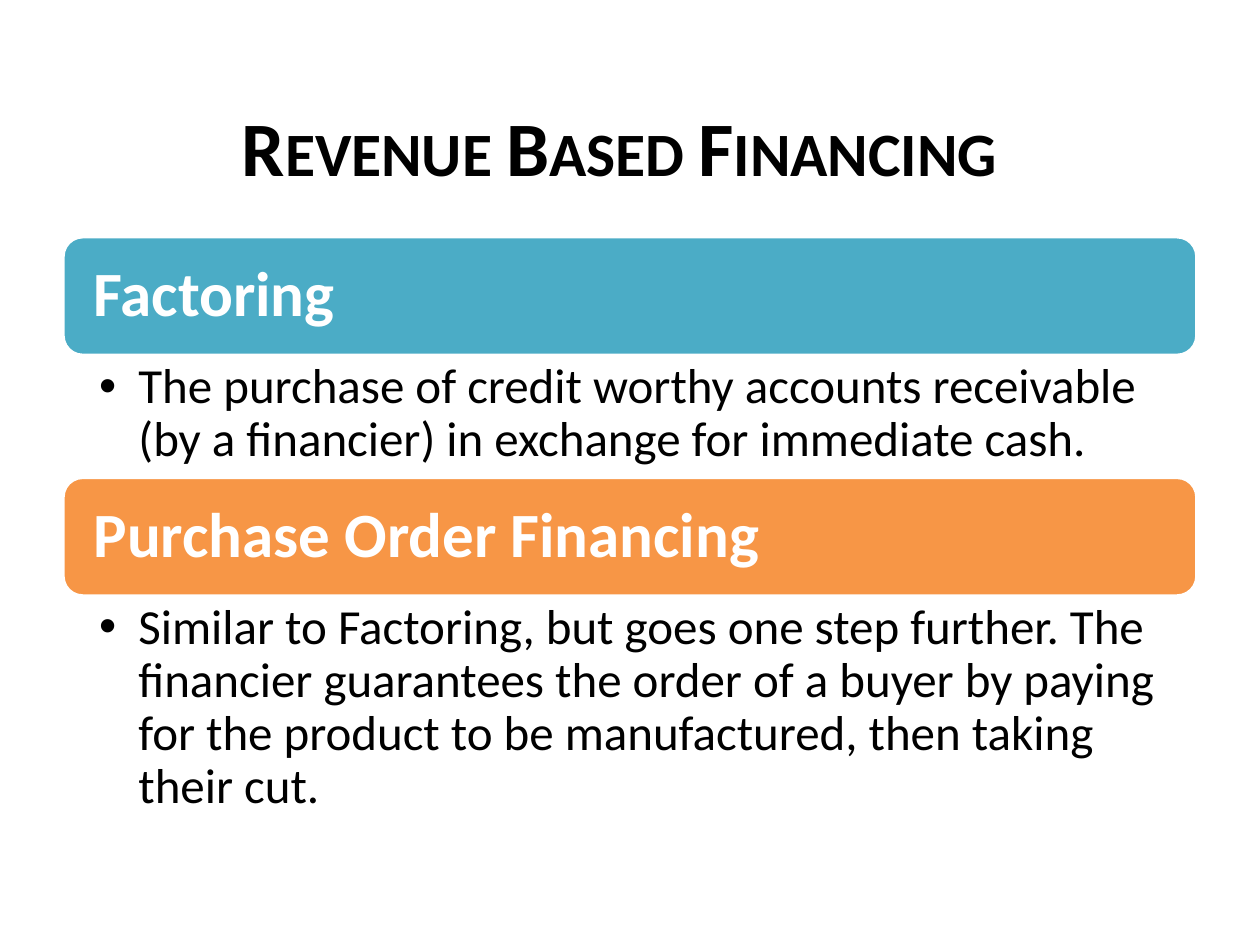
from lxml import etree
from pptx import Presentation
from pptx.dml.color import RGBColor
from pptx.enum.shapes import MSO_SHAPE
from pptx.enum.text import MSO_ANCHOR, PP_ALIGN
from pptx.oxml.ns import qn
from pptx.util import Pt

ROUND = MSO_SHAPE.ROUNDED_RECTANGLE
MID, TOP = MSO_ANCHOR.MIDDLE, MSO_ANCHOR.TOP
LEFT, CENTER = PP_ALIGN.LEFT, PP_ALIGN.CENTER
INK = {"black": "000000", "white": "FFFFFF", "teal": "4BACC6", "orange": "F79646"}
BAR = 67.8
PARTS = [
    ("Factoring", "teal", 69.7,
     "The purchase of credit worthy accounts receivable (by a financier) "
     "in exchange for immediate cash."),
    ("Purchase Order Financing", "orange", 131.8,
     "Similar to Factoring, but goes one step further. The financier guarantees "
     "the order of a buyer by paying for the product to be manufactured, "
     "then taking their cut."),
]


def color(name):
    return RGBColor.from_string(INK[name])


def write(shape, text, size=28, ink="black", bold=False, caps=False, align=LEFT,
          anchor=TOP, pad=(7.2, 3.6, 7.2, 3.6), space=1.0, hang=0):
    frame = shape.text_frame
    frame.word_wrap = True
    frame.vertical_anchor = anchor
    (frame.margin_left, frame.margin_top,
     frame.margin_right, frame.margin_bottom) = map(Pt, pad)
    para = frame.paragraphs[0]
    para.alignment = align
    para.line_spacing = space
    if hang:
        props = para._p.get_or_add_pPr()
        props.set("marL", str(Pt(hang)))
        props.set("indent", str(-Pt(hang)))
        etree.SubElement(props, qn("a:buFont")).set("typeface", "Arial")
        etree.SubElement(props, qn("a:buChar")).set("char", "•")
    run = para.add_run()
    run.text = text
    font = run.font
    font.name, font.size, font.bold = "Calibri", Pt(size), bold
    font.color.rgb = color(ink)
    if caps:
        run._r.get_or_add_rPr().set("cap", "small")


def title(slide, x, y, w, h):
    box = slide.shapes.add_textbox(Pt(x), Pt(y), Pt(w), Pt(h))
    write(box, "Revenue Based Financing", size=44, bold=True, caps=True,
          align=CENTER, anchor=MID)


def part(slide, x, y, w, h, head, fill, body):
    bar = slide.shapes.add_shape(ROUND, Pt(x), Pt(y), Pt(w), Pt(BAR))
    bar.shadow.inherit = False
    bar.fill.solid()
    bar.fill.fore_color.rgb = color(fill)
    bar.line.color.rgb = color("white")
    bar.line.width = Pt(2)
    write(bar, head, size=36, ink="white", bold=True, anchor=MID,
          pad=(14.2, 10.8, 14.2, 10.8), space=0.9)
    box = slide.shapes.add_textbox(Pt(x), Pt(y + BAR), Pt(w), Pt(h))
    write(box, body, pad=(20.6, 3.6, 20.2, 3.6), space=0.9, hang=22.5)


def main():
    deck = Presentation()
    deck.slide_width, deck.slide_height = Pt(720), Pt(540)
    slide = deck.slides.add_slide(deck.slide_layouts[6])
    title(slide, 30, 38, 648, 90)
    y = 135.3
    for head, fill, h, body in PARTS:
        part(slide, 36, y, 648, h, head, fill, body)
        y += BAR + h
    deck.save("out.pptx")


if __name__ == "__main__":
    main()
